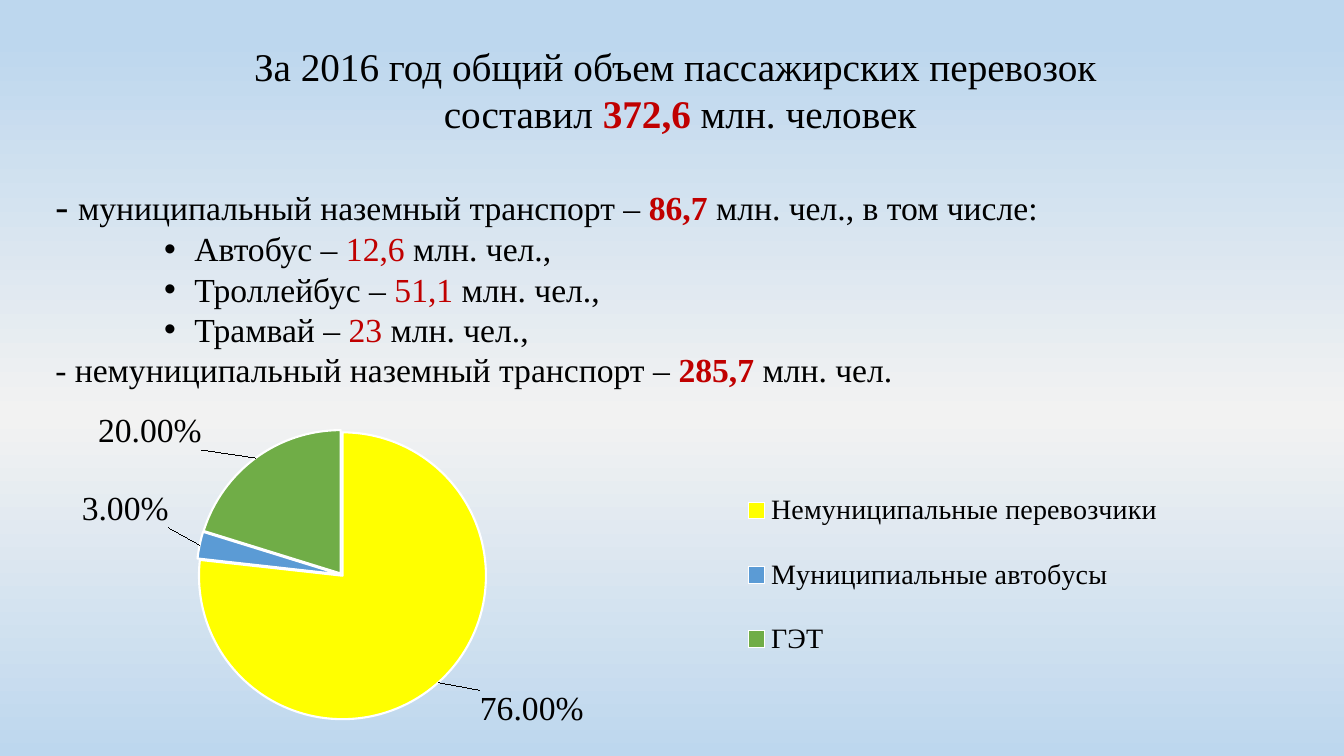
from copy import deepcopy

from lxml import etree
from pptx import Presentation
from pptx.chart.data import CategoryChartData
from pptx.dml.color import RGBColor
from pptx.enum.chart import XL_CHART_TYPE, XL_LABEL_POSITION, XL_LEGEND_POSITION
from pptx.enum.text import MSO_AUTO_SIZE, PP_ALIGN
from pptx.oxml.ns import qn
from pptx.util import Inches, Pt

PIE = XL_CHART_TYPE.PIE
OUTER = XL_LABEL_POSITION.OUTSIDE_END
BOTTOM = XL_LEGEND_POSITION.BOTTOM
GROW = MSO_AUTO_SIZE.SHAPE_TO_FIT_TEXT
CENTER, JUSTIFY, LEFT = PP_ALIGN.CENTER, PP_ALIGN.JUSTIFY, PP_ALIGN.LEFT

FACE = "Times New Roman"
BLACK, RED, WHITE = "000000", "C00000", "FFFFFF"
SKY, GRAY = "BDD7EE", "F2F2F2"

# Formats of text runs
HEAD = {"size": 28}
BODY = {"size": 24}
MARK = {"color": RED}
BOLD = {"color": RED, "bold": True}

RIDES = [("Автобус", "12,6"), ("Троллейбус", "51,1"), ("Трамвай", "23")]

# Name, share, colour, label shift as parts of the chart size
SLICES = [
    ("Немуниципальные перевозчики", 0.76, "FFFF00", (0.03, 0.01)),
    ("Муниципиальные автобусы", 0.03, "5B9BD5", (-0.02, -0.05)),
    ("ГЭТ", 0.2, "70AD47", (-0.04, -0.01)),
]


def rgb(code):
    return RGBColor.from_string(code)


def style(font, size=24, color=BLACK, bold=False):
    for key, value in {"name": FACE, "size": Pt(size), "bold": bold}.items():
        setattr(font, key, value)
    font.color.rgb = rgb(color)


def paint(slide, stops):
    """Fill the background with a vertical gradient."""
    fill = slide.background.fill
    fill.gradient()
    fill.gradient_angle = 270
    group = slide.background.fill._fill._gradFill.find(qn("a:gsLst"))
    while len(group) < len(stops):
        group.append(deepcopy(group[0]))
    for stop, (place, code) in zip(fill.gradient_stops, stops):
        stop.position = place
        stop.color.rgb = rgb(code)


def bullet(par):
    props = par._p.get_or_add_pPr()
    props.set("marL", str(Inches(1.38)))
    props.set("indent", str(Inches(-0.3)))
    etree.SubElement(props, qn("a:buFont")).set("typeface", "Arial")
    etree.SubElement(props, qn("a:buChar")).set("char", "•")


def write(frame, runs, align, first=False, dot=False, gap=0):
    par = frame.paragraphs[0] if first else frame.add_paragraph()
    par.alignment = align
    if gap:
        par.space_before = Pt(gap)
    if dot:
        bullet(par)
    for text, form in runs:
        run = par.add_run()
        run.text = text
        style(run.font, **form)


def add_text(slide):
    box = slide.shapes.add_textbox(
        Inches(0.45), Inches(0.37), Inches(12.59), Inches(4.01))
    frame = box.text_frame
    frame.word_wrap = True
    frame.auto_size = GROW

    # Heading
    write(frame, [("За 2016 год общий объем пассажирских перевозок ", HEAD)],
          CENTER, first=True)
    write(frame, [("составил ", HEAD), ("372,6", {**HEAD, **BOLD}),
                  (" млн. человек", HEAD)], CENTER)

    # Breakdown by carrier
    write(frame, [("- ", HEAD), ("муниципальный наземный транспорт – ", BODY),
                  ("86,7 ", BOLD), ("млн. чел., в том числе:", BODY)],
          JUSTIFY, gap=32)
    for name, count in RIDES:
        write(frame, [(name + " – ", BODY), (count, MARK),
                      (" млн. чел., ", BODY)], JUSTIFY, dot=True)
    write(frame, [("- немуниципальный наземный транспорт – ", BODY),
                  ("285,7", BOLD), (" млн. чел.", BODY)], LEFT)


def arrange(node, index, **parts):
    """Give a chart element a manual layout."""
    for old in node.findall(qn("c:layout")):
        node.remove(old)
    layout = etree.Element(qn("c:layout"))
    manual = etree.SubElement(layout, qn("c:manualLayout"))
    for tag, value in parts.items():
        etree.SubElement(manual, qn("c:" + tag)).set("val", str(value))
    node.insert(index, layout)


def add_pie(slide):
    data = CategoryChartData(number_format="0.00%")
    data.categories = [part[0] for part in SLICES]
    data.add_series("Series 1", [part[1] for part in SLICES])
    chart = slide.shapes.add_chart(
        PIE, Inches(0.45), Inches(4.07), Inches(12.5), Inches(3.2), data).chart
    chart.has_title = False
    style(chart.font)
    edge = {"xMode": "edge", "yMode": "edge"}
    area = chart._chartSpace.find(".//" + qn("c:plotArea"))
    arrange(area, 0, layoutTarget="inner", **edge, x=0.12, y=0.06, w=0.23, h=0.9)

    # Legend in one column
    chart.has_legend = True
    legend = chart.legend
    legend.position = BOTTOM
    legend.include_in_layout = False
    style(legend.font, 20)
    arrange(legend._element, 1, **edge, x=0.52, y=0.16, w=0.4, h=0.7)

    # Slices and their labels
    series = chart.plots[0].series[0]
    burst = etree.Element(qn("c:explosion"))
    burst.set("val", "1")
    series._element.find(qn("c:tx")).addnext(burst)
    labels = series.data_labels
    labels.show_value = True
    labels.number_format = "0.00%"
    labels.number_format_is_linked = False
    style(labels.font)
    for index, (_, _, code, (right, down)) in enumerate(SLICES):
        point = series.points[index]
        point.format.fill.solid()
        point.format.fill.fore_color.rgb = rgb(code)
        point.format.line.color.rgb = rgb(WHITE)
        point.format.line.width = Pt(1.5)
        label = point.data_label
        style(label.font)
        label.position = OUTER
    group = labels._element
    for node, part in zip(group.findall(qn("c:dLbl")), SLICES):
        arrange(node, 1, x=part[3][0], y=part[3][1])
    lead = group.find(qn("c:showLeaderLines"))
    if lead is None:
        lead = etree.SubElement(group, qn("c:showLeaderLines"))
    lead.set("val", "1")


def main():
    deck = Presentation()
    deck.slide_width, deck.slide_height = Inches(13.33), Inches(7.5)
    slide = deck.slides.add_slide(deck.slide_layouts[6])
    paint(slide, [(0.05, SKY), (0.55, GRAY), (1, SKY)])
    add_text(slide)
    add_pie(slide)
    deck.save("out.pptx")


if __name__ == "__main__":
    main()
